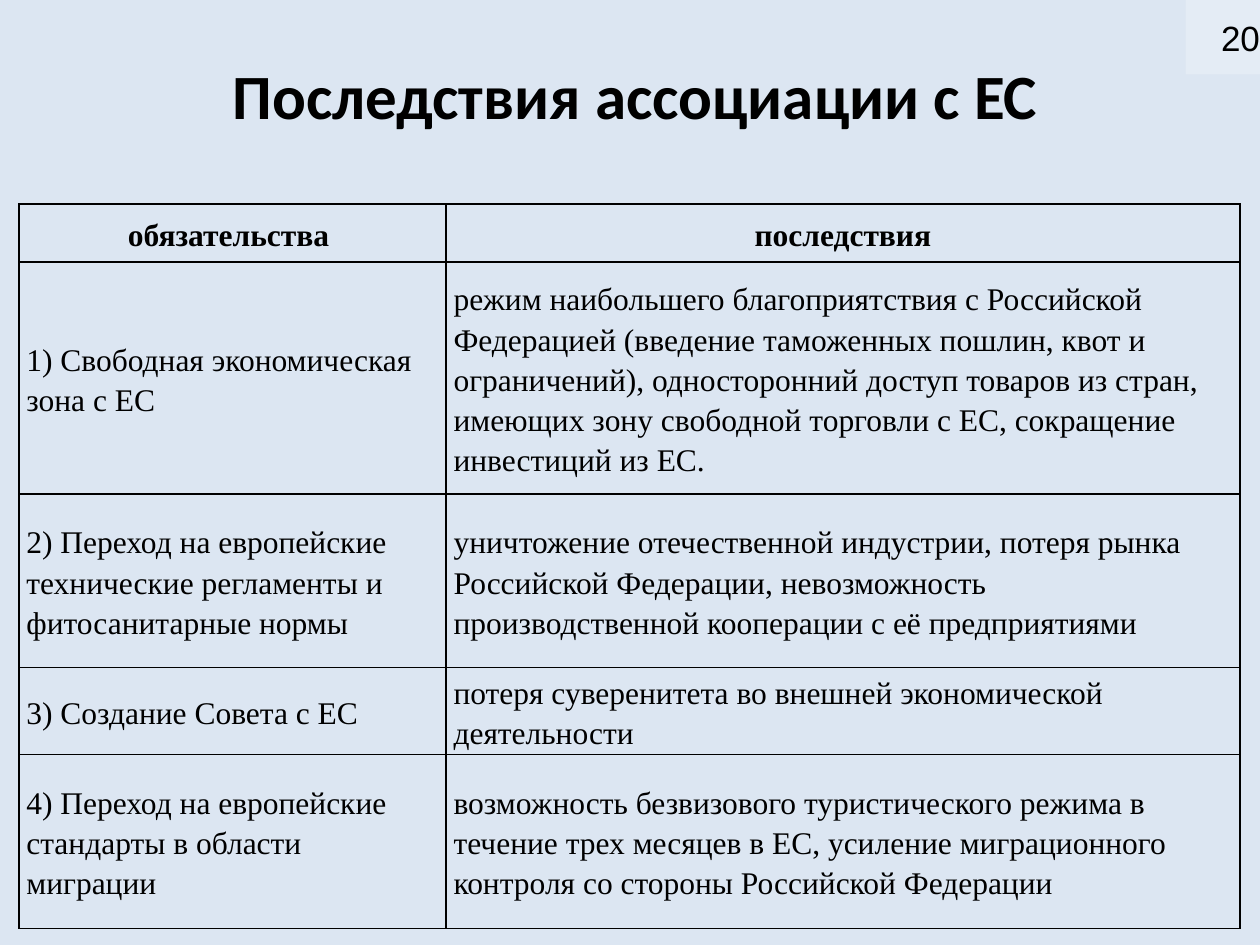
from typing import NamedTuple

from lxml.etree import SubElement
from pptx import Presentation
from pptx.dml.color import RGBColor
from pptx.enum.shapes import MSO_SHAPE as Shape
from pptx.enum.text import MSO_ANCHOR as Anchor, PP_ALIGN as Align
from pptx.oxml.ns import qn
from pptx.util import Pt

BLACK = "000000"


class Style(NamedTuple):
    font: str
    size: float
    bold: bool = False
    align: Align = Align.LEFT
    spacing: float = 1.0


class Consequence(NamedTuple):
    obligation: str
    effect: str
    height: float


TITLE = Style("Calibri", 36, True, Align.CENTER)
HEADER = Style("Times New Roman", 18, True, Align.CENTER, 1.15)
BODY = Style("Times New Roman", 18, spacing=1.15)
NUMBER = Style("Arial", 20, align=Align.RIGHT)

COLUMN_WIDTHS = (244.1, 453.6)
ROWS = [
    Consequence("обязательства ", "последствия", 33.1),
    Consequence(
        "1) Свободная экономическая зона с ЕС",
        "режим наибольшего благоприятствия с Российской Федерацией (введение "
        "таможенных пошлин, квот и ограничений), односторонний доступ товаров "
        "из стран, имеющих зону свободной торговли с ЕС, сокращение "
        "инвестиций из ЕС.", 132.5),
    Consequence(
        "2) Переход на европейские технические регламенты и фитосанитарные нормы",
        "уничтожение отечественной индустрии, потеря рынка Российской Федерации, "
        "невозможность производственной кооперации с её предприятиями ", 99.4),
    Consequence(
        "3) Создание Совета с ЕС",
        "потеря суверенитета во внешней экономической деятельности ", 49.7),
    Consequence(
        "4) Переход на европейские стандарты в области миграции",
        "возможность безвизового туристического режима в течение трех месяцев "
        "в ЕС, усиление миграционного контроля со стороны Российской Федерации ",
        99.4),
]


def color(value: str) -> RGBColor:
    return RGBColor.from_string(value)


def write(frame, text: str, style: Style) -> None:
    frame.word_wrap = True
    paragraph = frame.paragraphs[0]
    paragraph.alignment = style.align
    paragraph.line_spacing = style.spacing
    run = paragraph.add_run()
    run.text = text
    run.font.name = style.font
    run.font.size = Pt(style.size)
    run.font.bold = style.bold
    run.font.color.rgb = color(BLACK)


def add_borders(cell, width: float = 1) -> None:
    properties = cell._tc.get_or_add_tcPr()
    for side in ("a:lnL", "a:lnR", "a:lnT", "a:lnB"):
        line = SubElement(properties, qn(side), w=str(Pt(width)))
        fill = SubElement(line, qn("a:solidFill"))
        SubElement(fill, qn("a:srgbClr"), val=BLACK)


def fill_cell(cell, text: str, style: Style) -> None:
    cell.margin_left = cell.margin_right = Pt(4.3)
    cell.margin_top = cell.margin_bottom = 0
    cell.vertical_anchor = Anchor.MIDDLE
    add_borders(cell)
    cell.fill.background()
    write(cell.text_frame, text, style)


def add_title(slide) -> None:
    title = slide.shapes.add_textbox(Pt(5), Pt(28.8), Pt(716), Pt(51))
    write(title.text_frame, "Последствия ассоциации с ЕС", TITLE)


def add_consequences(slide) -> None:
    height = sum(row.height for row in ROWS)
    table = slide.shapes.add_table(
        len(ROWS), len(COLUMN_WIDTHS), Pt(10.8), Pt(116.6),
        Pt(sum(COLUMN_WIDTHS)), Pt(height)).table
    table.first_row = table.horz_banding = False
    for column, width in zip(table.columns, COLUMN_WIDTHS):
        column.width = Pt(width)
    for index, row in enumerate(ROWS):
        table.rows[index].height = Pt(row.height)
        style = BODY if index else HEADER
        fill_cell(table.cell(index, 0), row.obligation, style)
        fill_cell(table.cell(index, 1), row.effect, style)


def add_page_number(slide) -> None:
    side = 42.5
    badge = slide.shapes.add_shape(
        Shape.RECTANGLE, Pt(720 - side), 0, Pt(side), Pt(side))
    badge.shadow.inherit = False
    badge.line.fill.background()
    badge.fill.solid()
    badge.fill.fore_color.rgb = color("FFFFFF")
    white = badge.fill._xPr.find(qn("a:solidFill"))[0]
    SubElement(white, qn("a:alpha"), val="25000")
    frame = badge.text_frame
    frame.margin_left = frame.margin_right = 0
    frame.margin_top = frame.margin_bottom = 0
    frame.vertical_anchor = Anchor.MIDDLE
    write(frame, "20", NUMBER)


def main() -> None:
    deck = Presentation()
    deck.slide_width, deck.slide_height = Pt(720), Pt(540)
    slide = deck.slides.add_slide(deck.slide_layouts[6])
    slide.background.fill.solid()
    slide.background.fill.fore_color.rgb = color("DCE6F2")

    # Heading, table of obligations, page number
    add_title(slide)
    add_consequences(slide)
    add_page_number(slide)
    deck.save("out.pptx")


if __name__ == "__main__":
    main()
